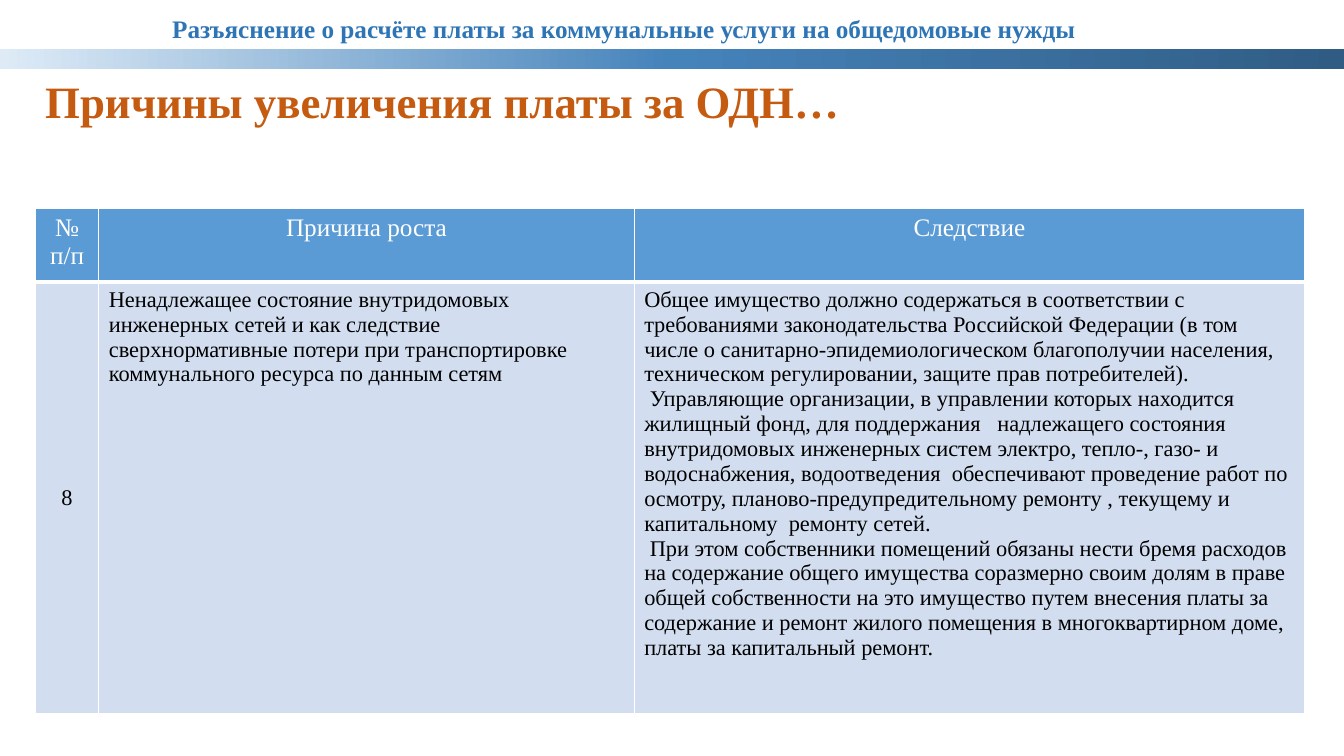
from dataclasses import dataclass

from lxml import etree
from pptx import Presentation
from pptx.dml.color import RGBColor
from pptx.enum.shapes import MSO_SHAPE
from pptx.enum.text import MSO_ANCHOR, PP_ALIGN
from pptx.oxml.ns import qn
from pptx.util import Inches, Pt

RECT = MSO_SHAPE.RECTANGLE
LEFT, CENTER = PP_ALIGN.LEFT, PP_ALIGN.CENTER
TOP, MIDDLE = MSO_ANCHOR.TOP, MSO_ANCHOR.MIDDLE


@dataclass(frozen=True)
class Theme:
    font: str = "Times New Roman"
    blue: str = "2E75B6"
    rust: str = "C55A11"
    white: str = "FFFFFF"
    black: str = "000000"
    head: str = "5B9BD5"
    body: str = "D2DEEF"
    band: tuple = ("DEEBF7", "4583BB", "305C84")
    title: int = 32
    label: int = 18
    text: int = 16


THEME = Theme()

HEADS = [["№", "п/п"], ["Причина роста"], ["Следствие"]]
CAUSE = [
    ["8"],
    ["Ненадлежащее состояние внутридомовых инженерных сетей и как следствие "
     "сверхнормативные потери при транспортировке коммунального ресурса по данным сетям"],
    ["Общее имущество должно содержаться в соответствии с требованиями законодательства "
     "Российской Федерации (в том числе о санитарно-эпидемиологическом благополучии "
     "населения, техническом регулировании, защите прав потребителей).",
     " Управляющие организации, в управлении которых находится  жилищный фонд, для "
     "поддержания   надлежащего состояния  внутридомовых инженерных систем электро, "
     "тепло-, газо- и водоснабжения, водоотведения  обеспечивают проведение работ по "
     "осмотру, планово-предупредительному ремонту , текущему и капитальному  ремонту сетей.",
     " При этом собственники помещений обязаны нести бремя расходов на содержание общего "
     "имущества соразмерно своим долям в праве общей собственности на это имущество путем "
     "внесения платы за содержание и ремонт жилого помещения в многоквартирном доме, "
     "платы за капитальный ремонт."],
]


def write(frame, lines, size, color, bold=False, align=LEFT):
    """Fill a text frame with one paragraph per line."""
    frame.word_wrap = True
    for i, line in enumerate(lines):
        para = frame.paragraphs[0] if i == 0 else frame.add_paragraph()
        para.alignment = align
        run = para.add_run()
        run.text = line
        style = {"name": THEME.font, "size": Pt(size), "bold": bold}
        for key, value in style.items():
            setattr(run.font, key, value)
        run.font.color.rgb = RGBColor.from_string(color)


def add_text(slide, box, line, size, color):
    shape = slide.shapes.add_textbox(*map(Inches, box))
    write(shape.text_frame, [line], size, color, bold=True)


def add_band(slide, box, colors):
    """Add a bar whose colours blend evenly from left to right."""
    band = slide.shapes.add_shape(RECT, *map(Inches, box))
    band.shadow.inherit = False
    band.line.fill.background()
    band.fill.gradient()
    band.fill.gradient_angle = 0
    stops = band.element.spPr.find(qn("a:gradFill")).find(qn("a:gsLst"))
    for stop in list(stops):
        stops.remove(stop)
    for i, color in enumerate(colors):
        pos = 100000 * i // (len(colors) - 1)
        stop = etree.SubElement(stops, qn("a:gs"), pos=str(pos))
        etree.SubElement(stop, qn("a:srgbClr"), val=color)


def set_edges(cell, widths):
    """Draw white cell borders; widths run left, right, top, bottom."""
    props = cell._tc.get_or_add_tcPr()
    for i, (side, width) in enumerate(zip("LRTB", widths)):
        line = etree.Element(qn(f"a:ln{side}"), w=str(Pt(width)))
        fill = etree.SubElement(line, qn("a:solidFill"))
        etree.SubElement(fill, qn("a:srgbClr"), val=THEME.white)
        props.insert(i, line)


def fill_cell(cell, lines, size, color, fill, align, anchor, widths):
    write(cell.text_frame, lines, size, color, align=align)
    cell.vertical_anchor = anchor
    cell.fill.solid()
    cell.fill.fore_color.rgb = RGBColor.from_string(fill)
    set_edges(cell, widths)


def add_grid(slide, left, top, cols, rows):
    box = (left, top, sum(cols), sum(rows))
    grid = slide.shapes.add_table(len(rows), len(cols), *map(Inches, box)).table
    for col, width in zip(grid.columns, cols):
        col.width = Inches(width)
    for row, height in zip(grid.rows, rows):
        row.height = Inches(height)
    for i, lines in enumerate(HEADS):
        fill_cell(grid.cell(0, i), lines, THEME.label, THEME.white, THEME.head,
                  CENTER, TOP, (1, 1, 1, 3))
    for i, lines in enumerate(CAUSE):
        align, anchor = (CENTER, MIDDLE) if i == 0 else (LEFT, TOP)
        fill_cell(grid.cell(1, i), lines, THEME.text, THEME.black, THEME.body,
                  align, anchor, (1, 1, 3, 1))


def main():
    deck = Presentation()
    deck.slide_width, deck.slide_height = Inches(13.33), Inches(7.5)
    slide = deck.slides.add_slide(deck.slide_layouts[6])
    add_band(slide, (0, 0.49, 13.33, 0.19), THEME.band)
    add_text(slide, (1.61, 0.08, 9.22, 0.4),
             "Разъяснение о расчёте платы за коммунальные услуги на общедомовые нужды",
             THEME.label, THEME.blue)
    add_text(slide, (0.35, 0.68, 9.58, 0.94), "Причины увеличения платы за ОДН…",
             THEME.title, THEME.rust)
    add_grid(slide, 0.35, 2.07, (0.63, 5.31, 6.65), (0.73, 4.28))
    deck.save("out.pptx")


if __name__ == "__main__":
    main()
